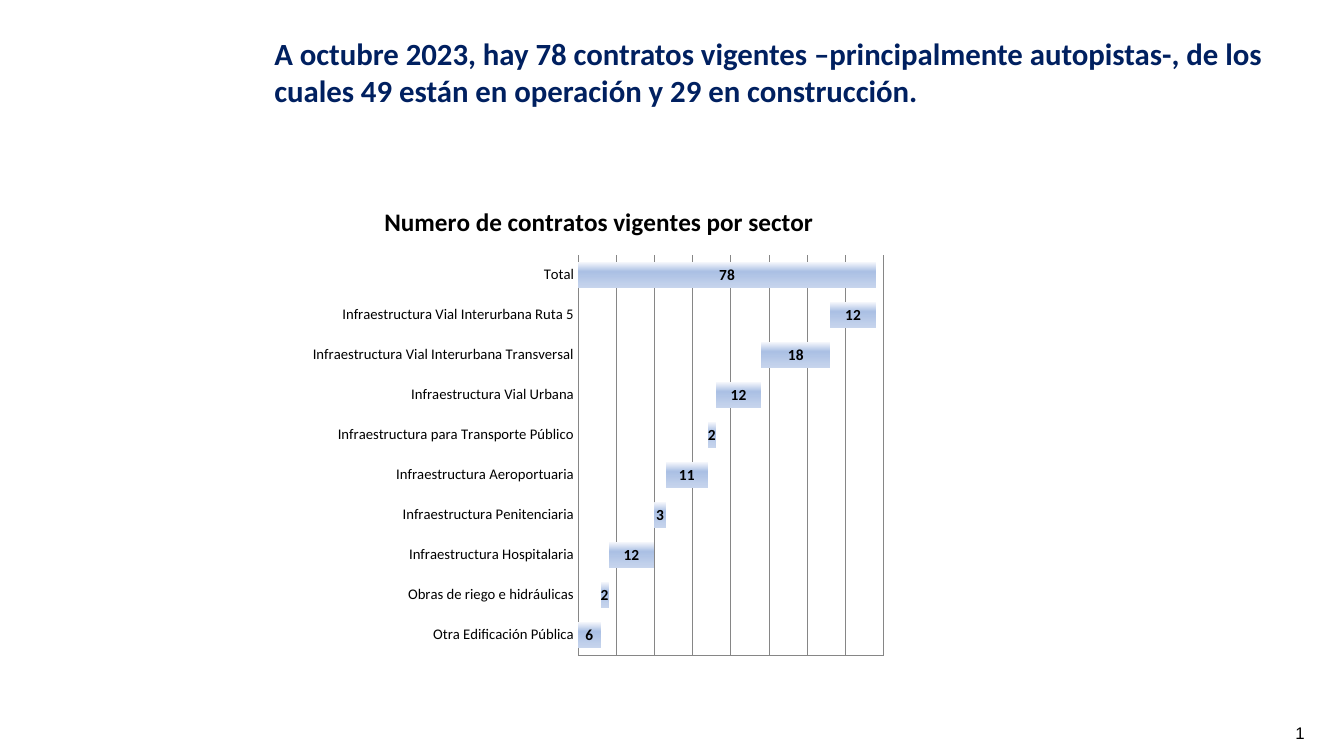
from dataclasses import dataclass
from itertools import accumulate

from lxml import etree
from pptx import Presentation
from pptx import util as u
from pptx.chart.data import CategoryChartData
from pptx.dml.color import RGBColor
from pptx.enum import chart as ch
from pptx.enum import text as tx
from pptx.oxml import parse_xml
from pptx.oxml.ns import nsdecls, qn


@dataclass(frozen=True)
class Theme:
    face: str = "Calibri"
    plain: str = "Arial"
    navy: str = "002060"
    black: str = "000000"
    grid: str = "868686"
    stops: tuple = ((0, "F6F8FC"), (36, "ABC0E4"), (38, "ABC0E4"), (100, "C7D5ED"))
    head: float = 22
    title: float = 18
    axis: float = 10.5
    label: float = 11
    base: float = 10
    page: float = 12


THEME = Theme()
WIDE, HIGH = 13.33, 7.5
SECTORS = {
    "Otra Edificación Pública": 6,
    "Obras de riego e hidráulicas": 2,
    "Infraestructura Hospitalaria": 12,
    "Infraestructura Penitenciaria": 3,
    "Infraestructura Aeroportuaria": 11,
    "Infraestructura para Transporte Público": 2,
    "Infraestructura Vial Urbana": 12,
    "Infraestructura Vial Interurbana Transversal": 18,
    "Infraestructura Vial Interurbana Ruta 5": 12,
}


def share(x, y, w, h):
    return [u.Inches(size * part / 100)
            for size, part in zip((WIDE, HIGH, WIDE, HIGH), (x, y, w, h))]


def apply(item, **vals):
    for key, val in vals.items():
        setattr(item, key, val)


def style(font, size, color=THEME.black, bold=False, name=THEME.face):
    apply(font, size=u.Pt(size), bold=bold, name=name)
    font.color.rgb = RGBColor.from_string(color)


def stroke(line):
    line.color.rgb = RGBColor.from_string(THEME.grid)
    line.width = u.Pt(0.75)


def heading(slide, words, box):
    title = slide.shapes.title
    apply(title, **dict(zip(("left", "top", "width", "height"), box)))
    frame = title.text_frame
    edge = u.Inches(0.03)
    apply(frame, text=words, word_wrap=True, vertical_anchor=tx.MSO_ANCHOR.MIDDLE,
          margin_left=edge, margin_right=edge, margin_top=edge, margin_bottom=edge)
    para = frame.paragraphs[0]
    apply(para, alignment=tx.PP_ALIGN.LEFT, line_spacing=1.0, space_before=u.Pt(0))
    style(para.runs[0].font, THEME.head, THEME.navy, True)


def number(slide, value, box):
    frame = slide.shapes.add_textbox(*box).text_frame
    frame.word_wrap = True
    para = frame.paragraphs[0]
    para.alignment = tx.PP_ALIGN.CENTER
    run = para.add_run()
    run.text = value
    style(run.font, THEME.page, name=THEME.plain)
    field = run._r
    field.tag = qn("a:fld")
    field.set("id", "{B6F15528-21DE-4FAA-801E-634DDDAF4B2B}")
    field.set("type", "slidenum")


def shade(series):
    stops = "".join(f'<a:gs pos="{pos * 1000}"><a:srgbClr val="{color}"/></a:gs>'
                    for pos, color in THEME.stops)
    series.format.fill.solid()
    props = series.format.fill._xPr
    solid = props.find(qn("a:solidFill"))
    props.replace(solid, parse_xml(
        f'<a:gradFill {nsdecls("a")} rotWithShape="1"><a:gsLst>{stops}</a:gsLst>'
        '<a:lin ang="5400000" scaled="0"/></a:gradFill>'))
    series.format.line.fill.background()


def place(chart, **parts):
    area = chart._chartSpace.chart.plotArea
    for old in area.findall(qn("c:layout")):
        area.remove(old)
    layout = etree.Element(qn("c:layout"))
    manual = etree.SubElement(layout, qn("c:manualLayout"))
    modes = {"layoutTarget": "inner", "xMode": "edge", "yMode": "edge"}
    for key, val in {**modes, **parts}.items():
        etree.SubElement(manual, qn(f"c:{key}")).set("val", str(val))
    area.insert(0, layout)


def axes(chart):
    cats, vals = chart.category_axis, chart.value_axis
    for axis in (cats, vals):
        apply(axis, major_tick_mark=ch.XL_TICK_MARK.NONE,
              minor_tick_mark=ch.XL_TICK_MARK.NONE)
        stroke(axis.format.line)
    style(cats.tick_labels.font, THEME.axis)
    cats.has_major_gridlines = False
    apply(vals, minimum_scale=0, maximum_scale=80, major_unit=10,
          has_major_gridlines=True, tick_label_position=ch.XL_TICK_LABEL_POSITION.NONE)
    stroke(vals.major_gridlines.format.line)


def cascade(slide, name, sectors, box):
    sizes = list(sectors.values())
    data = CategoryChartData()
    data.categories = [*sectors, "Total"]
    data.add_series("Series 1", [*accumulate(sizes[:-1], initial=0), 0])
    data.add_series("Series 2", [*sizes, sum(sizes)])
    chart = slide.shapes.add_chart(ch.XL_CHART_TYPE.BAR_STACKED, *box, data).chart
    style(chart.font, THEME.base)
    apply(chart, has_legend=False, has_title=True)
    title = chart.chart_title
    title.include_in_layout = False
    title.text_frame.text = name
    style(title.text_frame.paragraphs[0].runs[0].font, THEME.title, bold=True)
    plot = chart.plots[0]
    apply(plot, gap_width=55, overlap=100, vary_by_categories=False)
    spacer, bars = plot.series
    spacer.format.fill.background()
    spacer.format.line.fill.background()
    shade(bars)
    labels = bars.data_labels
    apply(labels, show_value=True, position=ch.XL_LABEL_POSITION.CENTER)
    style(labels.font, THEME.label, bold=True)
    axes(chart)
    place(chart, x=0.465, y=0.147, w=0.514, h=0.832)


def main():
    deck = Presentation()
    apply(deck, slide_width=u.Inches(WIDE), slide_height=u.Inches(HIGH))
    slide = deck.slides.add_slide(deck.slide_layouts[5])
    heading(slide, "A octubre 2023, hay 78 contratos vigentes –principalmente autopistas-, "
            "de los cuales 49 están en operación y 29 en construcción.",
            share(20.18, 4.13, 79.82, 10.67))
    cascade(slide, "Numero de contratos vigentes por sector", SECTORS,
            share(22.43, 24.4, 44.26, 63.6))
    number(slide, "3", share(94.82, 94.93, 3.83, 2.8))
    deck.save("out.pptx")


if __name__ == "__main__":
    main()
